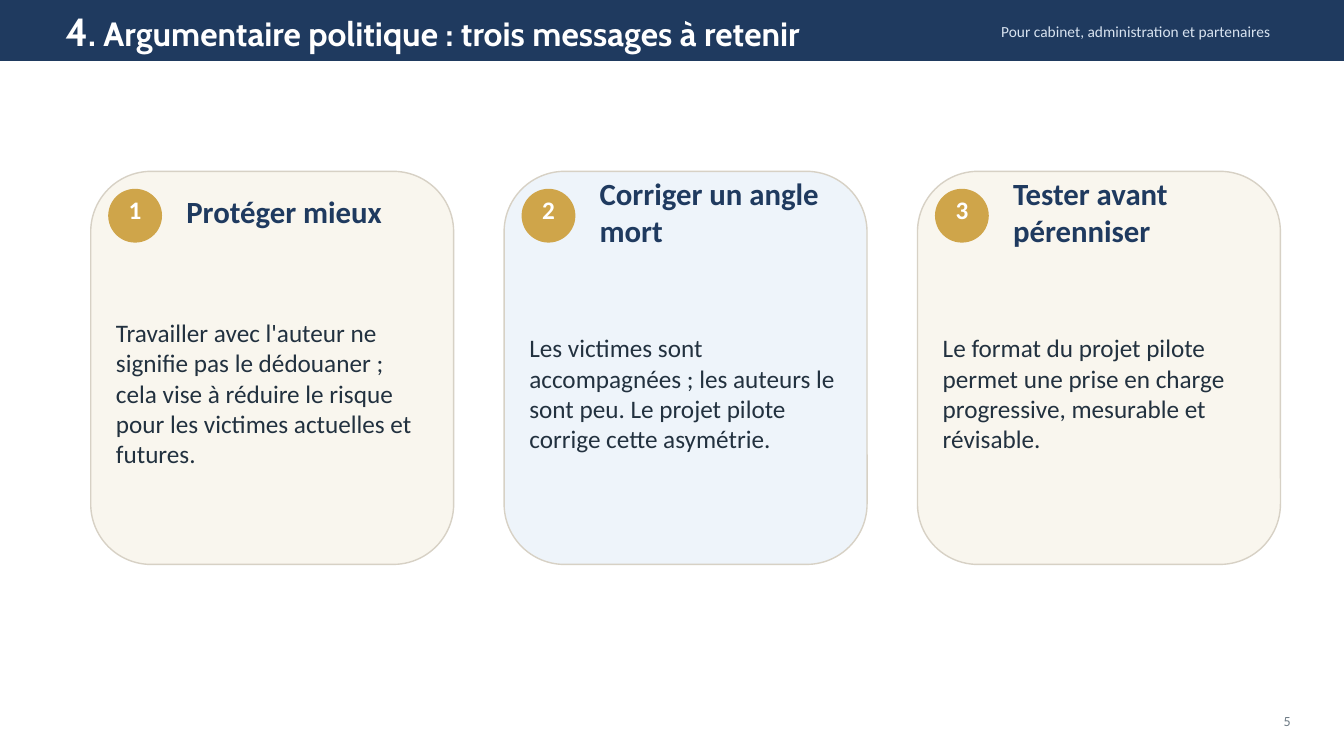
"""Build the slide of three political messages."""
from dataclasses import dataclass

from pptx import Presentation
from pptx.dml.color import RGBColor
from pptx.enum.shapes import MSO_SHAPE as Kind
from pptx.enum.text import MSO_ANCHOR as Anchor, PP_ALIGN as Align
from pptx.slide import Slide
from pptx.util import Inches, Pt

NAVY = RGBColor(0x1F, 0x3A, 0x5F)
WHITE = RGBColor(0xFF, 0xFF, 0xFF)
PALE = RGBColor(0xD8, 0xE3, 0xF0)
CREAM = RGBColor(0xF9, 0xF6, 0xEE)
SKY = RGBColor(0xEE, 0xF4, 0xFA)
SAND = RGBColor(0xD7, 0xD1, 0xC5)
GOLD = RGBColor(0xCF, 0xA5, 0x4A)
INK = RGBColor(0x22, 0x31, 0x3F)
GREY = RGBColor(0x6E, 0x7B, 0x85)

Box = tuple[float, float, float, float]


@dataclass(frozen=True)
class Style:
    """Look of a text."""
    size: float
    color: RGBColor
    bold: bool = False
    name: str = "Calibri"
    align: Align = Align.LEFT
    inset: bool = True


@dataclass(frozen=True)
class Card:
    """One message to remember."""
    title: str
    body: str
    fill: RGBColor


LEAD = Style(28, WHITE, True, "Cabin")
HEAD = Style(24, WHITE, True, "Cabin")
NOTE = Style(11, PALE, align=Align.RIGHT)
BADGE = Style(18, WHITE, True, align=Align.CENTER, inset=False)
TITLE = Style(22, NAVY, True)
BODY = Style(18, INK, inset=False)
PAGE = Style(10, GREY, align=Align.RIGHT)

CARDS = [
    Card("Protéger mieux",
         "Travailler avec l'auteur ne signifie pas le dédouaner ; cela vise à "
         "réduire le risque pour les victimes actuelles et futures.", CREAM),
    Card("Corriger un angle mort",
         "Les victimes sont accompagnées ; les auteurs le sont peu. "
         "Le projet pilote corrige cette asymétrie.", SKY),
    Card("Tester avant pérenniser",
         "Le format du projet pilote permet une prise en charge progressive, "
         "mesurable et révisable.", CREAM),
]
LEFT, TOP, STEP = 0.9, 1.7, 4.1


def add_form(slide: Slide, kind: Kind, box: Box, fill: RGBColor, edge: RGBColor) -> None:
    """Draw a filled shape with a thin edge."""
    form = slide.shapes.add_shape(kind, *map(Inches, box))
    form.shadow.inherit = False
    form.fill.solid()
    form.fill.fore_color.rgb = fill
    form.line.color.rgb = edge
    form.line.width = Pt(1)


def add_text(slide: Slide, box: Box, *runs: tuple[str, Style]) -> None:
    """Write one paragraph of styled runs."""
    frame = slide.shapes.add_textbox(*map(Inches, box)).text_frame
    first = runs[0][1]
    form = {"word_wrap": True, "vertical_anchor": Anchor.MIDDLE}
    if not first.inset:
        form |= {f"margin_{side}": 0 for side in ("left", "top", "right", "bottom")}
    for key, value in form.items():
        setattr(frame, key, value)
    para = frame.paragraphs[0]
    para.alignment = first.align
    for text, style in runs:
        run = para.add_run()
        run.text = text
        font = {"name": style.name, "size": Pt(style.size), "bold": style.bold}
        for key, value in font.items():
            setattr(run.font, key, value)
        run.font.color.rgb = style.color


def add_card(slide: Slide, index: int, card: Card) -> None:
    """Draw a message card with its numbered badge."""
    left = LEFT + index * STEP
    add_form(slide, Kind.ROUNDED_RECTANGLE, (left, TOP, 3.6, 3.9), card.fill, SAND)
    add_form(slide, Kind.OVAL, (left + 0.18, TOP + 0.18, 0.52, 0.52), GOLD, GOLD)
    add_text(slide, (left + 0.18, TOP + 0.31, 0.52, 0.14), (str(index + 1), BADGE))
    add_text(slide, (left + 0.85, TOP + 0.25, 2.4, 0.3), (card.title, TITLE))
    add_text(slide, (left + 0.25, TOP + 0.95, 3.05, 2.5), (card.body, BODY))


def main() -> None:
    """Build and save the deck."""
    deck = Presentation()
    deck.slide_width, deck.slide_height = Inches(13.33), Inches(7.5)
    slide = deck.slides.add_slide(deck.slide_layouts[6])
    add_form(slide, Kind.RECTANGLE, (0, 0, 13.33, 0.6), NAVY, NAVY)
    add_text(slide, (0.55, 0.18, 8.5, 0.26), ("4", LEAD),
             (". Argumentaire politique : trois messages à retenir", HEAD))
    add_text(slide, (9.2, 0.2, 3.5, 0.22),
             ("Pour cabinet, administration et partenaires", NOTE))
    for index, card in enumerate(CARDS):
        add_card(slide, index, card)
    add_text(slide, (12.6, 7.05, 0.3, 0.2), ("5", PAGE))
    deck.save("out.pptx")


if __name__ == "__main__":
    main()
